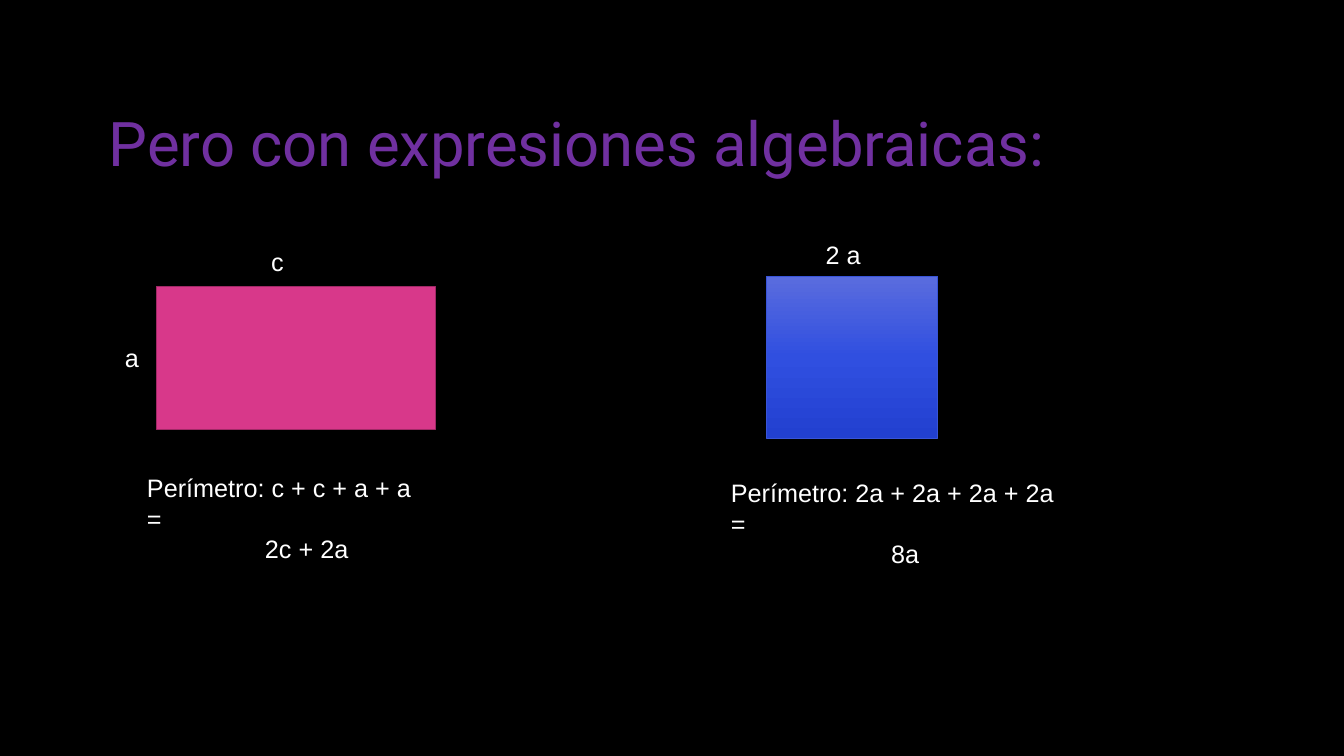
from copy import deepcopy
from dataclasses import dataclass

from pptx import Presentation
from pptx import util as u
from pptx.dml import color
from pptx.enum import shapes, text as t


@dataclass(frozen=True)
class Theme:
    background: str = "000000"
    title: str = "7030A0"
    body: str = "FFFFFF"
    pink: str = "D8388A"
    pink_line: str = "A02966"
    blues: tuple = ("5A6CDE", "304FE0", "2240D0")
    blue_line: str = "3854D8"
    title_font: str = "Roboto"
    body_font: str = "Arial"
    title_size: int = 44
    body_size: int = 18


THEME = Theme()


def rgb(value):
    return color.RGBColor.from_string(value)


def add_text(parent, place, lines, *, size=THEME.body_size, font=THEME.body_font,
             ink=THEME.body, spacing=1.0, indent=0, grow=True):
    box = parent.add_textbox(*map(u.Inches, place))
    frame = box.text_frame
    frame.word_wrap = True
    frame.vertical_anchor = t.MSO_ANCHOR.TOP
    if grow:
        frame.auto_size = t.MSO_AUTO_SIZE.SHAPE_TO_FIT_TEXT
    for index, line in enumerate(lines):
        para = frame.add_paragraph() if index else frame.paragraphs[0]
        para.line_spacing = spacing
        if index and indent:
            properties = para._p.get_or_add_pPr()
            properties.set("marL", str(u.Inches(indent)))
            properties.set("indent", "0")
        span = para.add_run()
        span.text = line
        span.font.size = u.Pt(size)
        span.font.name = font
        span.font.color.rgb = rgb(ink)
    return box


def fill_gradient(fill, colours):
    fill.gradient()
    fill.gradient_angle = 270
    stop_list = fill.gradient_stops[0]._gs.getparent()
    stop_list.insert(1, deepcopy(stop_list[0]))
    for index, (stop, value) in enumerate(zip(fill.gradient_stops, colours)):
        stop.position = index / (len(colours) - 1)
        stop.color.rgb = rgb(value)


def add_rectangle(parent, place, fill, line, width):
    rectangle = parent.add_shape(shapes.MSO_SHAPE.RECTANGLE, *map(u.Inches, place))
    rectangle.shadow.inherit = False
    if isinstance(fill, tuple):
        fill_gradient(rectangle.fill, fill)
    else:
        rectangle.fill.solid()
        rectangle.fill.fore_color.rgb = rgb(fill)
    rectangle.line.color.rgb = rgb(line)
    rectangle.line.width = u.Pt(width)
    return rectangle


def main():
    deck = Presentation()
    deck.slide_width = u.Inches(13.33)
    deck.slide_height = u.Inches(7.5)
    page = deck.slides.add_slide(deck.slide_layouts[6])
    page.background.fill.solid()
    page.background.fill.fore_color.rgb = rgb(THEME.background)

    add_text(page.shapes, (0.98, 1.07, 10, 1.38), ["Pero con expresiones algebraicas:"],
             size=THEME.title_size, font=THEME.title_font, ink=THEME.title,
             spacing=0.9, grow=False)

    group = page.shapes.add_group_shape().shapes
    add_rectangle(group, (1.55, 2.84, 2.77, 1.42), THEME.pink, THEME.pink_line, 1)
    add_text(group, (2.59, 2.39, 0.69, 0.4), ["c"])
    add_text(group, (1.14, 3.35, 1.8, 0.4), ["a"])

    add_rectangle(page.shapes, (7.6, 2.74, 1.7, 1.61), THEME.blues, THEME.blue_line, 0.5)
    add_text(page.shapes, (8.09, 2.33, 1.08, 0.4), ["2 a"])

    add_text(page.shapes, (1.36, 4.64, 2.96, 0.71),
             ["Perímetro: c + c + a + a =", "2c + 2a"], indent=1.17)
    add_text(page.shapes, (7.15, 4.69, 3.48, 0.71),
             ["Perímetro: 2a + 2a + 2a + 2a =", "8a"], indent=1.59)

    deck.save("out.pptx")


if __name__ == "__main__":
    main()
